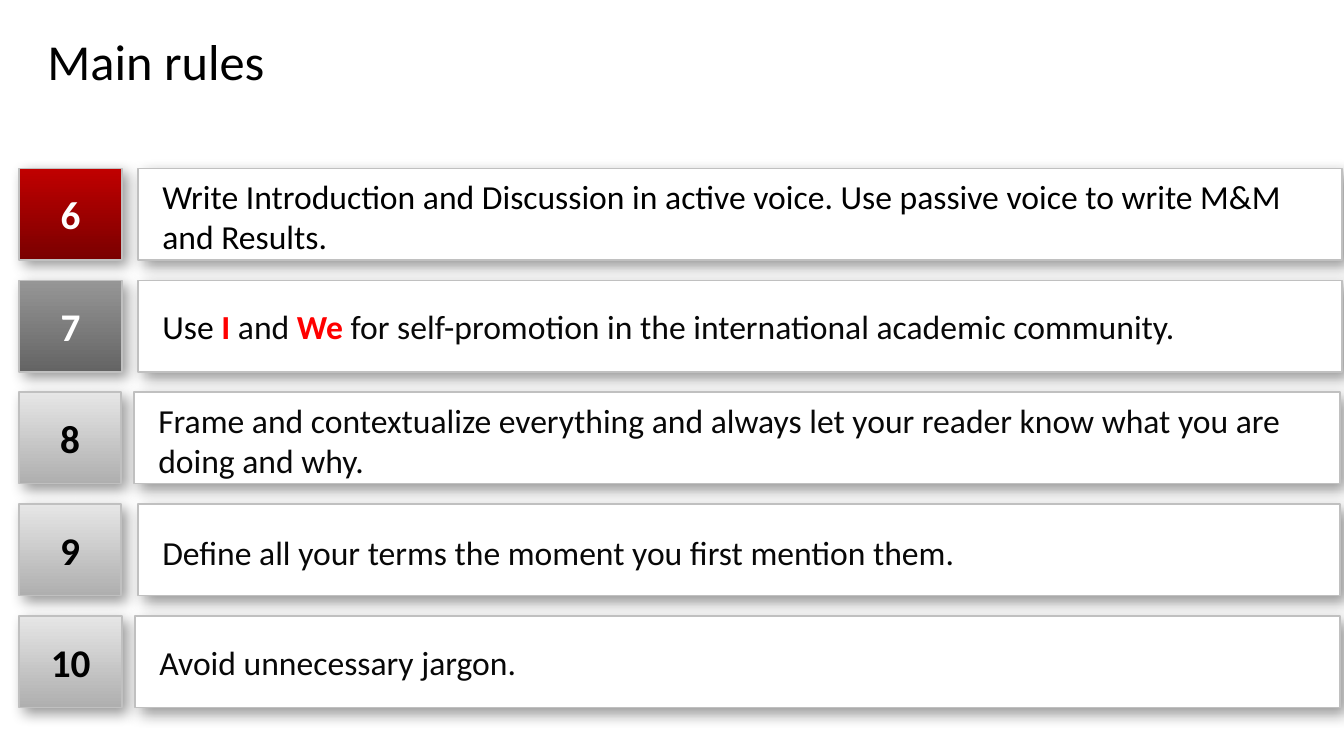
from lxml import etree
from pptx import Presentation
from pptx.dml.color import RGBColor
from pptx.enum import shapes, text
from pptx.oxml import ns
from pptx.util import Inches, Pt

TITLE = "Main rules"
FONT = "Calibri"
BLACK, INK, RED, WHITE, EDGE = "000000", "080808", "FF0000", "FFFFFF", "C0C0C0"
CRIMSON = ("C00000", "7A0000", WHITE)
DARK = ("969696", "646464", WHITE)
LIGHT = ("E6E6E6", "AFAFAF", BLACK)

RULES = [
    ("6", CRIMSON, 1.02, 1.37, 13.31, False,
     [("Write Introduction and Discussion in active voice. "
       "Use passive voice to write M&M and Results.", BLACK)]),
    ("7", DARK, 1.02, 1.37, 13.31, True,
     [("Use", BLACK), (" I ", RED), ("and", INK), (" We ", RED),
      ("for self-promotion in the international academic community.", INK)]),
    ("8", LIGHT, 1.01, 1.33, 13.29, False,
     [("Frame and contextualize everything and always let your reader "
       "know what you are doing and why.", INK)]),
    ("9", LIGHT, 1.01, 1.37, 13.29, False,
     [("Define all your terms the moment you first mention them.", INK)]),
    ("10", LIGHT, 1.02, 1.34, 13.29, True,
     [("Avoid unnecessary jargon.", INK)]),
]
LEFT, TOP, HEIGHT, PITCH = 0.19, 1.67, 0.91, 1.11


def rgb(value):
    return RGBColor.from_string(value)


def style(font, size, color, bold=False):
    font.name = FONT
    font.size = Pt(size)
    font.bold = bold
    font.color.rgb = rgb(color)


def set_insets(tf, left, top, right, bottom):
    tf.margin_left, tf.margin_top = Inches(left), Inches(top)
    tf.margin_right, tf.margin_bottom = Inches(right), Inches(bottom)


def add_shadow(sp):
    sp.shadow.inherit = False
    effects = sp.element.spPr.find(ns.qn("a:effectLst"))
    shadow = etree.SubElement(
        effects, ns.qn("a:outerShdw"), blurRad=str(Pt(10)), dist=str(Pt(5)),
        dir=str(45 * 60000), algn="tl", rotWithShape="0")
    color = etree.SubElement(shadow, ns.qn("a:srgbClr"), val=BLACK)
    etree.SubElement(color, ns.qn("a:alpha"), val="40000")


def add_box(group, left, top, width, insets):
    sp = group.shapes.add_shape(
        shapes.MSO_SHAPE.RECTANGLE,
        Inches(left), Inches(top), Inches(width), Inches(HEIGHT))
    sp.line.color.rgb = rgb(EDGE)
    sp.line.width = Pt(1)
    tf = sp.text_frame
    tf.word_wrap = True
    tf.vertical_anchor = text.MSO_ANCHOR.MIDDLE
    set_insets(tf, *insets)
    return sp


def add_number(group, number, colors, top, width):
    start, end, ink = colors
    sp = add_box(group, LEFT, top, width, (0.12, 0.08, 0.12, 0.08))
    sp.fill.gradient()
    sp.fill.gradient_angle = 270
    for stop, position, color in zip(sp.fill.gradient_stops, (0, 1), (start, end)):
        stop.position = position
        stop.color.rgb = rgb(color)
    add_shadow(sp)
    sp.text_frame.text = number
    p = sp.text_frame.paragraphs[0]
    p.alignment = text.PP_ALIGN.CENTER
    style(p.runs[0].font, 28, ink, True)


def add_rule(group, parts, top, left, right, tight):
    sp = add_box(group, left, top, right - left, (0.24, 0.12, 0.16, 0.08))
    sp.fill.solid()
    sp.fill.fore_color.rgb = rgb(WHITE)
    add_shadow(sp)
    p = sp.text_frame.paragraphs[0]
    p.alignment = text.PP_ALIGN.LEFT
    if tight:
        p.line_spacing = 0.95
        p.space_after = Pt(4)
    for words, color in parts:
        r = p.add_run()
        r.text = words
        style(r.font, 24, color, color == RED)


def main():
    prs = Presentation()
    prs.slide_width, prs.slide_height = Inches(13.33), Inches(7.5)
    s = prs.slides.add_slide(prs.slide_layouts[5])

    title = s.shapes.title
    title.left, title.top = Inches(0.47), Inches(0.26)
    title.width, title.height = Inches(12.39), Inches(0.67)
    tf = title.text_frame
    tf.text = TITLE
    tf.vertical_anchor = text.MSO_ANCHOR.MIDDLE
    set_insets(tf, 0, 0, 0, 0)
    tf.paragraphs[0].alignment = text.PP_ALIGN.LEFT
    style(tf.paragraphs[0].runs[0].font, 36, BLACK)

    for i, (number, colors, width, left, right, tight, parts) in enumerate(RULES):
        top = TOP + i * PITCH
        group = s.shapes.add_group_shape()
        add_number(group, number, colors, top, width)
        add_rule(group, parts, top, left, right, tight)

    prs.save("out.pptx")


if __name__ == "__main__":
    main()
